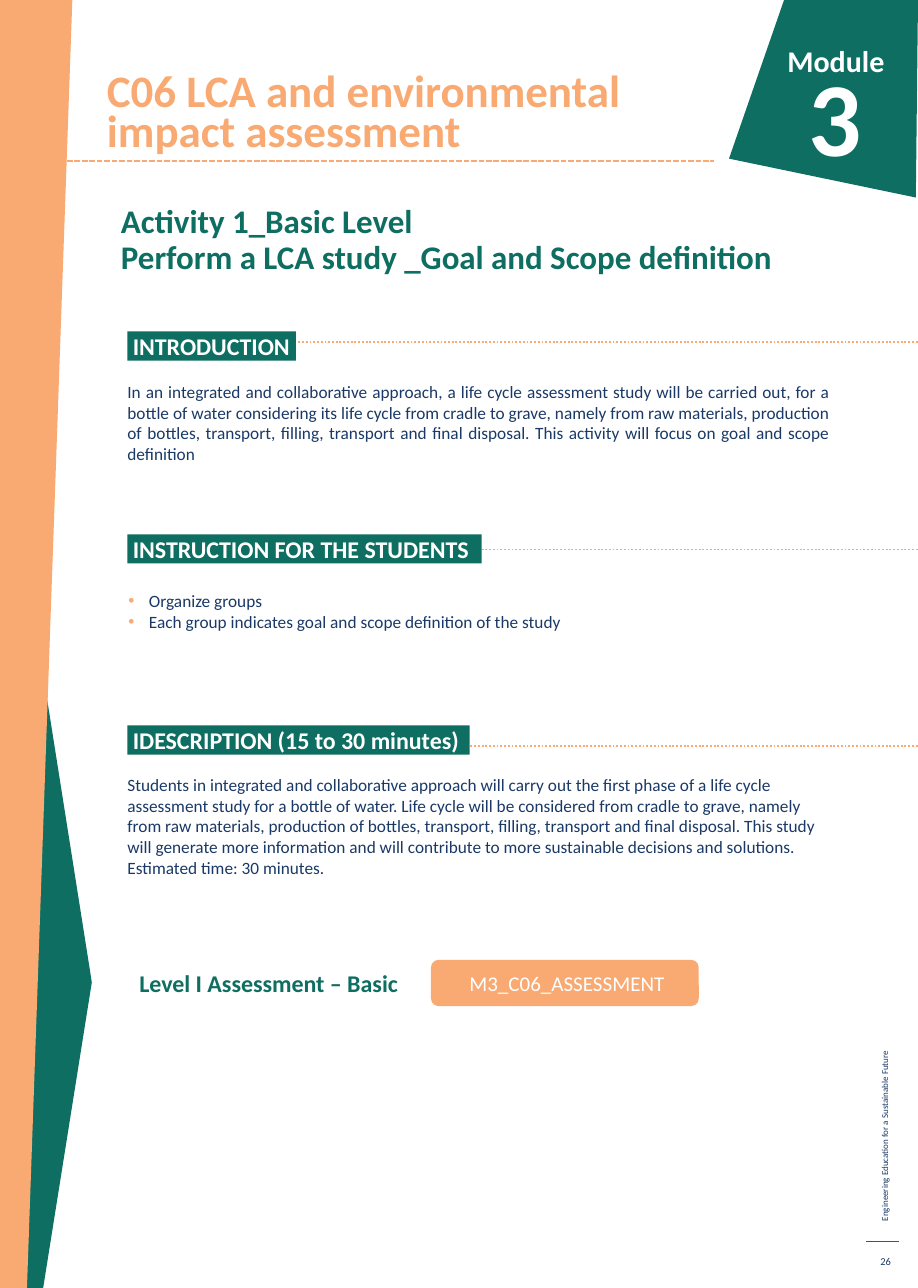
from lxml import etree
from pptx import Presentation
from pptx import util as u
from pptx.dml.color import RGBColor
from pptx.enum import dml, shapes, text
from pptx.oxml.ns import qn

WIDTH, HEIGHT = 8.5, 11.93
COLORS = {"green": "0E6E61", "orange": "F9AA73", "navy": "1A3966", "white": "FFFFFF"}
FONT = "Calibri"
LEFT, COLUMN = 1.18, 6.5  # text column
BAR_HEIGHT, RULE_START = 0.27, 2.52

TITLE = "C06 LCA and environmental impact assessment"
ACTIVITY = ["Activity 1_Basic Level", "Perform a LCA study _Goal and Scope definition"]
SECTIONS = [
    dict(heading="INTRODUCTION", bar_top=3.07, bar_width=1.56, rule=3.17, body_top=3.53,
         style=dict(align="JUSTIFY"),
         body=["In an integrated and collaborative approach, a life cycle assessment study will be "
               "carried out, for a bottle of water considering its life cycle from cradle to grave, "
               "namely from raw materials, production of bottles, transport, filling, transport and "
               "final disposal. This activity will focus on goal and scope definition"]),
    dict(heading="INSTRUCTION FOR THE STUDENTS", bar_top=4.95, bar_width=3.28, rule=5.09, body_top=5.47,
         style=dict(bullet="orange"),
         body=["Organize groups", "Each group indicates goal and scope definition of the study"]),
    dict(heading="IDESCRIPTION (15 to 30 minutes)", bar_top=6.72, bar_width=3.17, rule=6.91, body_top=7.17,
         style={},
         body=["Students in integrated and collaborative approach will carry out the first phase of a "
               "life cycle assessment study for a bottle of water. Life cycle will be considered from "
               "cradle to grave, namely from raw materials, production of bottles, transport, filling, "
               "transport and final disposal. This study will generate more information and will "
               "contribute to more sustainable decisions and solutions. Estimated time: 30 minutes."]),
]
LEVEL, ASSESSMENT = "Level I Assessment – Basic", "M3_C06_ASSESSMENT"
FOOTER, PAGE_NUMBER = "Engineering Education for a Sustainable Future", "26"

GREEN_WEDGE = [(0.4, HEIGHT), (0.23, HEIGHT), (0.23, 5.17), (0.83, 8.97), (0.85, 9.1)]
ORANGE_BAND = [(0, 0), (0.67, 0), (0.25, HEIGHT), (0, HEIGHT)]
MODULE_BADGE = [(WIDTH, 0), (7.26, 0), (6.75, 1.47), (8.48, 1.83)]

deck = Presentation()
deck.slide_width, deck.slide_height = u.Inches(WIDTH), u.Inches(HEIGHT)
page = deck.slides.add_slide(deck.slide_layouts[6])


def rgb(name):
    return RGBColor.from_string(COLORS[name])


def paint(shape, color):
    shape.shadow.inherit = False
    shape.fill.solid()
    shape.fill.fore_color.rgb = rgb(color)
    shape.line.fill.background()
    return shape


def add_bullet(para, color):
    props = para._p.get_or_add_pPr()
    props.set("marL", str(u.Inches(0.2)))
    props.set("indent", str(-u.Inches(0.19)))
    tint = etree.SubElement(props, qn("a:buClr"))
    etree.SubElement(tint, qn("a:srgbClr"), val=COLORS[color])
    etree.SubElement(props, qn("a:buFont"), typeface="Arial")
    etree.SubElement(props, qn("a:buChar"), char="•")


def write(shape, lines, size, color, bold=False, align="LEFT", anchor="TOP",
          spacing=None, bullet=None, inset=0):
    frame = shape.text_frame
    frame.word_wrap = True
    frame.vertical_anchor = getattr(text.MSO_ANCHOR, anchor)
    frame.margin_left = u.Inches(inset)
    frame.margin_right = frame.margin_top = frame.margin_bottom = 0
    for index, line in enumerate(lines):
        para = frame.add_paragraph() if index else frame.paragraphs[0]
        para.alignment = getattr(text.PP_ALIGN, align)
        if spacing:
            para.line_spacing = spacing
        if bullet:
            add_bullet(para, bullet)
        span = para.add_run()
        span.text = line
        span.font.name, span.font.size, span.font.bold = FONT, u.Pt(size), bold
        span.font.color.rgb = rgb(color)
    return shape


def add_text(left, top, width, height, lines, size, color, **style):
    box = page.shapes.add_textbox(*map(u.Inches, (left, top, width, height)))
    return write(box, lines, size, color, **style)


def add_block(kind, left, top, width, height, color):
    return paint(page.shapes.add_shape(kind, *map(u.Inches, (left, top, width, height))), color)


def add_polygon(points, color):
    corners = [(u.Inches(x), u.Inches(y)) for x, y in points]
    builder = page.shapes.build_freeform(*corners[0])
    builder.add_line_segments(corners[1:], close=True)
    paint(builder.convert_to_shape(), color)


def add_rule(start, end, y, color, weight, dash=None):
    rule = page.shapes.add_connector(shapes.MSO_CONNECTOR.STRAIGHT,
                                     *map(u.Inches, (start, y, end, y)))
    rule.line.color.rgb = rgb(color)
    rule.line.width = u.Pt(weight)
    if dash:
        rule.line.dash_style = dash
    etree.SubElement(rule._element.spPr, qn("a:effectLst"))


# Page frame
add_polygon(GREEN_WEDGE, "green")
add_polygon(ORANGE_BAND, "orange")
footer = add_text(7.09, 10.16, 2.2, 0.1, [FOOTER], 6, "navy", anchor="MIDDLE")
footer.rotation = 270
add_rule(8.02, 8.32, 11.5, "green", 0.75)
add_text(8.02, 11.54, 0.23, 0.29, [PAGE_NUMBER], 7, "navy", align="RIGHT", anchor="MIDDLE")

# Header
add_polygon(MODULE_BADGE, "green")
add_text(6.59, 0.39, 1.6, 0.35, ["Module"], 20, "white", bold=True, align="RIGHT")
add_text(6.38, 0.48, 1.6, 1.2, ["3"], 70, "white", bold=True, align="RIGHT")
add_text(0.99, 0.71, 5.19, 0.74, [TITLE], 30, "orange", bold=True, anchor="BOTTOM",
         spacing=u.Pt(26.8))
add_rule(0.62, 6.61, 1.49, "orange", 1.25, dml.MSO_LINE.SQUARE_DOT)
add_text(1.12, 1.9, 6.58, 0.7, ACTIVITY, 22, "green", bold=True, spacing=0.9)

# Sections
for section in SECTIONS:
    add_rule(RULE_START, WIDTH, section["rule"], "orange", 1.25, dml.MSO_LINE.ROUND_DOT)
    bar = add_block(shapes.MSO_SHAPE.RECTANGLE, LEFT, section["bar_top"],
                    section["bar_width"], BAR_HEIGHT, "green")
    write(bar, [section["heading"]], 16, "white", bold=True, anchor="MIDDLE", inset=0.05)
    add_text(LEFT, section["body_top"], COLUMN, 1, section["body"], 11.5, "navy",
             **section["style"])

# Assessment
add_text(1.29, 9, 2.6, 0.3, [LEVEL], 16, "green", bold=True, spacing=0.9)
button = add_block(shapes.MSO_SHAPE.ROUNDED_RECTANGLE, 3.99, 8.89, 2.48, 0.43, "orange")
write(button, [ASSESSMENT], 14, "white", align="CENTER", anchor="MIDDLE", inset=0.04)

deck.save("out.pptx")
